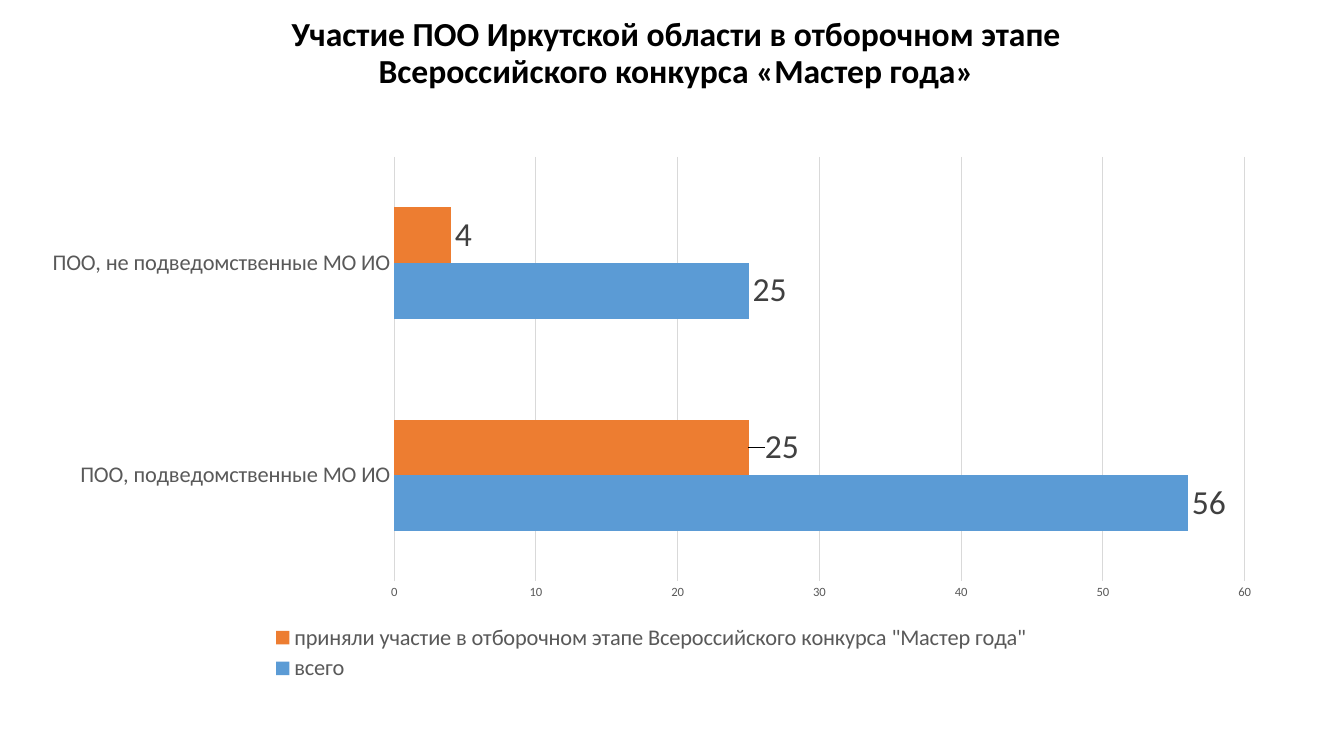
from lxml.etree import SubElement
from pptx import Presentation
from pptx.chart.data import CategoryChartData as ChartData
from pptx.dml.color import RGBColor
from pptx.enum.chart import XL_CHART_TYPE as ChartType
from pptx.enum.chart import XL_LABEL_POSITION as LabelPosition
from pptx.enum.chart import XL_LEGEND_POSITION as LegendPosition
from pptx.enum.chart import XL_TICK_MARK as TickMark
from pptx.enum.text import MSO_ANCHOR as Anchor
from pptx.enum.text import PP_ALIGN as Align
from pptx.oxml.ns import qn
from pptx.util import Pt

BLACK = RGBColor(0x00, 0x00, 0x00)
DARK = RGBColor(0x40, 0x40, 0x40)
GREY = RGBColor(0x59, 0x59, 0x59)
PALE = RGBColor(0xD9, 0xD9, 0xD9)
BLUE = RGBColor(0x5B, 0x9B, 0xD5)
ORANGE = RGBColor(0xED, 0x7D, 0x31)
FONT = "Calibri"

TITLE = "Участие ПОО Иркутской области в отборочном этапе\vВсероссийского конкурса «Мастер года»"
CATEGORIES = ["ПОО, подведомственные МО ИО", "ПОО, не подведомственные МО ИО"]
SERIES = [
    ("всего", (56, 25), BLUE),
    ('приняли участие в отборочном этапе Всероссийского конкурса "Мастер года"', (25, 4), ORANGE),
]
TITLE_BOX = {"left": Pt(69), "top": Pt(8.6), "width": Pt(828), "height": Pt(60)}
CHART_BOX = (Pt(19.4), Pt(104.4), Pt(892), Pt(385.2))
PLOT_LAYOUT = {"layoutTarget": "inner", "xMode": "edge", "yMode": "edge",
               "x": 0.294, "y": 0.02, "w": 0.681, "h": 0.787}
LEGEND_LAYOUT = {"xMode": "edge", "yMode": "edge", "x": 0.19, "y": 0.88, "w": 0.62, "h": 0.12}
LABEL_SHIFT = {"x": 0.01, "y": 0}


def apply(target, **values):
    for name, value in values.items():
        setattr(target, name, value)


def style_font(font, size, color, bold=False):
    apply(font, name=FONT, size=Pt(size), bold=bold)
    font.color.rgb = color


def style_line(line):
    line.color.rgb = PALE
    line.width = Pt(0.75)


def set_layout(element, values, after=None):
    layout = element.find(qn("c:layout"))
    if layout is None:
        layout = SubElement(element, qn("c:layout"))
        position = 0 if after is None else element.index(element.find(qn(after))) + 1
        element.insert(position, layout)
    manual = SubElement(layout, qn("c:manualLayout"))
    for name, value in values.items():
        SubElement(manual, qn("c:" + name)).set("val", str(value))


def add_title(page):
    title = page.shapes.title
    apply(title, **TITLE_BOX)
    frame = title.text_frame
    apply(frame, text=TITLE, vertical_anchor=Anchor.MIDDLE, word_wrap=True)
    para = frame.paragraphs[0]
    apply(para, alignment=Align.CENTER, line_spacing=0.9)
    for span in para.runs:
        style_font(span.font, 24, BLACK, True)


def add_bars(page):
    data = ChartData()
    data.categories = CATEGORIES
    for name, values, color in SERIES:
        data.add_series(name, values)
    chart = page.shapes.add_chart(ChartType.BAR_CLUSTERED, *CHART_BOX, data).chart
    style_font(chart.font, 10, BLACK)
    apply(chart, has_title=False, has_legend=True)
    apply(chart.legend, position=LegendPosition.BOTTOM, include_in_layout=False)
    style_font(chart.legend.font, 16, GREY)

    for axis, size in ((chart.category_axis, 16), (chart.value_axis, 9)):
        apply(axis, major_tick_mark=TickMark.NONE, minor_tick_mark=TickMark.NONE)
        style_font(axis.tick_labels.font, size, GREY)
    style_line(chart.category_axis.format.line)
    apply(chart.value_axis, minimum_scale=0, maximum_scale=60, major_unit=10)
    chart.value_axis.format.line.fill.background()
    style_line(chart.value_axis.major_gridlines.format.line)

    plot = chart.plots[0]
    apply(plot, gap_width=182, vary_by_categories=False)
    for series, (name, values, color) in zip(plot.series, SERIES):
        series.format.fill.solid()
        series.format.fill.fore_color.rgb = color
        labels = series.data_labels
        apply(labels, show_value=True, position=LabelPosition.OUTSIDE_END)
        style_font(labels.font, 24, DARK)

    shifted = plot.series[1].points[0].data_label
    style_font(shifted.font, 24, DARK)
    shifted.position = LabelPosition.OUTSIDE_END
    label = next(plot.series[1]._element.iter(qn("c:dLbl")))
    set_layout(label, LABEL_SHIFT, "c:idx")
    set_layout(chart._chartSpace.chart.plotArea, PLOT_LAYOUT)
    set_layout(chart.legend._element, LEGEND_LAYOUT, "c:legendPos")


def main():
    deck = Presentation()
    apply(deck, slide_width=Pt(960), slide_height=Pt(540))
    page = deck.slides.add_slide(deck.slide_layouts[5])
    add_title(page)
    add_bars(page)
    deck.save("out.pptx")


if __name__ == "__main__":
    main()
